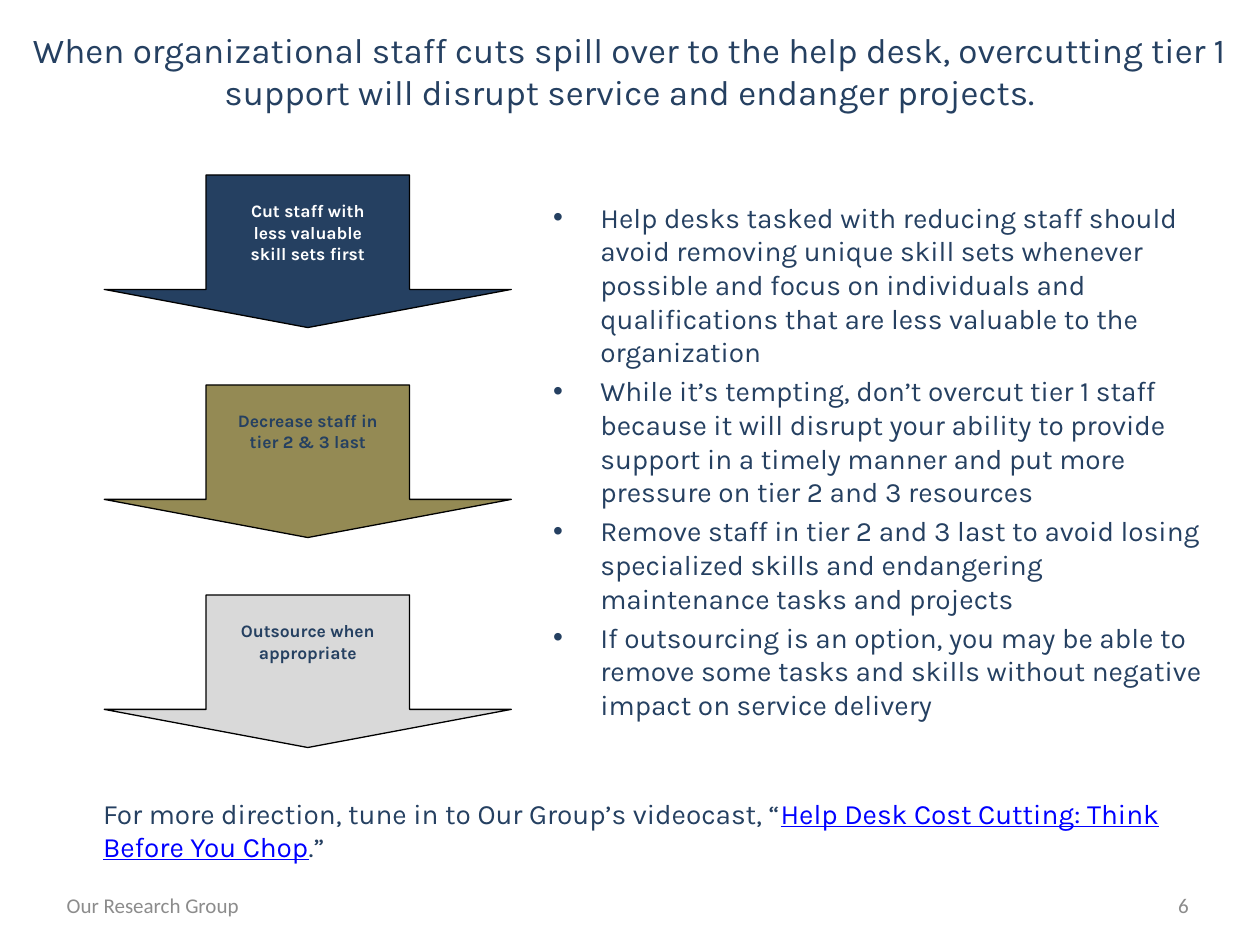
import pptx
import pptx.util
import pptx.dml.color
import pptx.enum.shapes
import pptx.enum.text
import pptx.oxml
import pptx.oxml.ns

Pt = pptx.util.Pt
RGBColor = pptx.dml.color.RGBColor
ALIGN = pptx.enum.text.PP_ALIGN
ANCHOR = pptx.enum.text.MSO_ANCHOR

NAVY = RGBColor(0x25, 0x40, 0x61)
OLIVE = RGBColor(0x94, 0x8A, 0x54)
SILVER = RGBColor(0xD9, 0xD9, 0xD9)
GRAY = RGBColor(0x8C, 0x8C, 0x8C)
BLUE = RGBColor(0x00, 0x00, 0xFF)
WHITE = RGBColor(0xFF, 0xFF, 0xFF)
BLACK = RGBColor(0x00, 0x00, 0x00)

deck = pptx.Presentation()
deck.slide_width, deck.slide_height = Pt(720), Pt(540)
slide = deck.slides.add_slide(deck.slide_layouts[6])


def add_box(left, top, width, height, anchor=ANCHOR.TOP):
    box = slide.shapes.add_textbox(Pt(left), Pt(top), Pt(width), Pt(height))
    box.text_frame.word_wrap = True
    box.text_frame.vertical_anchor = anchor
    return box.text_frame


def add_run(para, text, size, color=NAVY, face="Karla"):
    run = para.add_run()
    run.text = text
    run.font.size = Pt(size)
    run.font.name = face
    run.font.color.rgb = color
    return run


# Title
para = add_box(0, 3.6, 720, 73.4, ANCHOR.MIDDLE).paragraphs[0]
para.alignment = ALIGN.CENTER
add_run(para, "When organizational staff cuts spill over to the help desk, "
        "overcutting tier 1 support will disrupt service and endanger projects.", 20)

# Three steps, each an arrow with a label
steps = [
    ("Cut staff with less valuable skill sets first", NAVY, WHITE, 83),
    ("Decrease staff in tier 2 & 3 last", OLIVE, NAVY, 105),
    ("Outsource when appropriate", SILVER, NAVY, 105),
]
left, width, height = 59.6, 232.6, 87.2
for row, (text, fill, color, wide) in enumerate(steps):
    top = 100 + 120 * row
    arrow = slide.shapes.add_shape(
        pptx.enum.shapes.MSO_SHAPE.DOWN_ARROW, Pt(left), Pt(top), Pt(width), Pt(height))
    arrow.adjustments[0] = 0.5
    arrow.adjustments[1] = 0.25
    arrow.shadow.inherit = False
    arrow.fill.solid()
    arrow.fill.fore_color.rgb = fill
    arrow.line.color.rgb = BLACK
    arrow.line.width = Pt(0.75)

    para = add_box(left + (width - wide) / 2, top + 11, wide, 43).paragraphs[0]
    para.alignment = ALIGN.CENTER
    add_run(para, text, 10, color).font.bold = True

# Bulleted advice
points = [
    "Help desks tasked with reducing staff should avoid removing unique skill sets "
    "whenever possible and focus on individuals and qualifications that are less "
    "valuable to the organization",
    "While it’s tempting, don’t overcut tier 1 staff because it will disrupt your "
    "ability to provide support in a timely manner and put more pressure on tier 2 "
    "and 3 resources",
    "Remove staff in tier 2 and 3 last to avoid losing specialized skills and "
    "endangering maintenance tasks and projects",
    "If outsourcing is an option, you may be able to remove some tasks and skills "
    "without negative impact on service delivery",
]
frame = add_box(309, 111, 391, 340.5)
for row, text in enumerate(points):
    para = frame.add_paragraph() if row else frame.paragraphs[0]
    para.space_before = Pt(3.2 if row else 0)
    props = para._p.get_or_add_pPr()
    props.set("marL", str(Pt(27)))
    props.set("indent", str(Pt(-27)))
    font = pptx.oxml.parse_xml(
        f'<a:buFont {pptx.oxml.ns.nsdecls("a")} typeface="Arial"/>')
    mark = pptx.oxml.parse_xml(f'<a:buChar {pptx.oxml.ns.nsdecls("a")} char="•"/>')
    props.extend([font, mark])
    add_run(para, text, 16)

# Closing pointer
para = add_box(51.8, 451.5, 635, 46).paragraphs[0]
add_run(para, "For more direction, tune in to Our Group’s videocast, “", 16)
add_run(para, "Help Desk Cost Cutting: Think Before You Chop", 16, BLUE).font.underline = True
add_run(para, ".”", 16)

# Footer
para = add_box(31, 502.5, 260.6, 29, ANCHOR.MIDDLE).paragraphs[0]
add_run(para, "Our Research Group", 12, GRAY, "Calibri")
para = add_box(518.4, 502.5, 168, 29, ANCHOR.MIDDLE).paragraphs[0]
para.alignment = ALIGN.RIGHT
add_run(para, "6", 12, GRAY, "Calibri")

deck.save("out.pptx")
